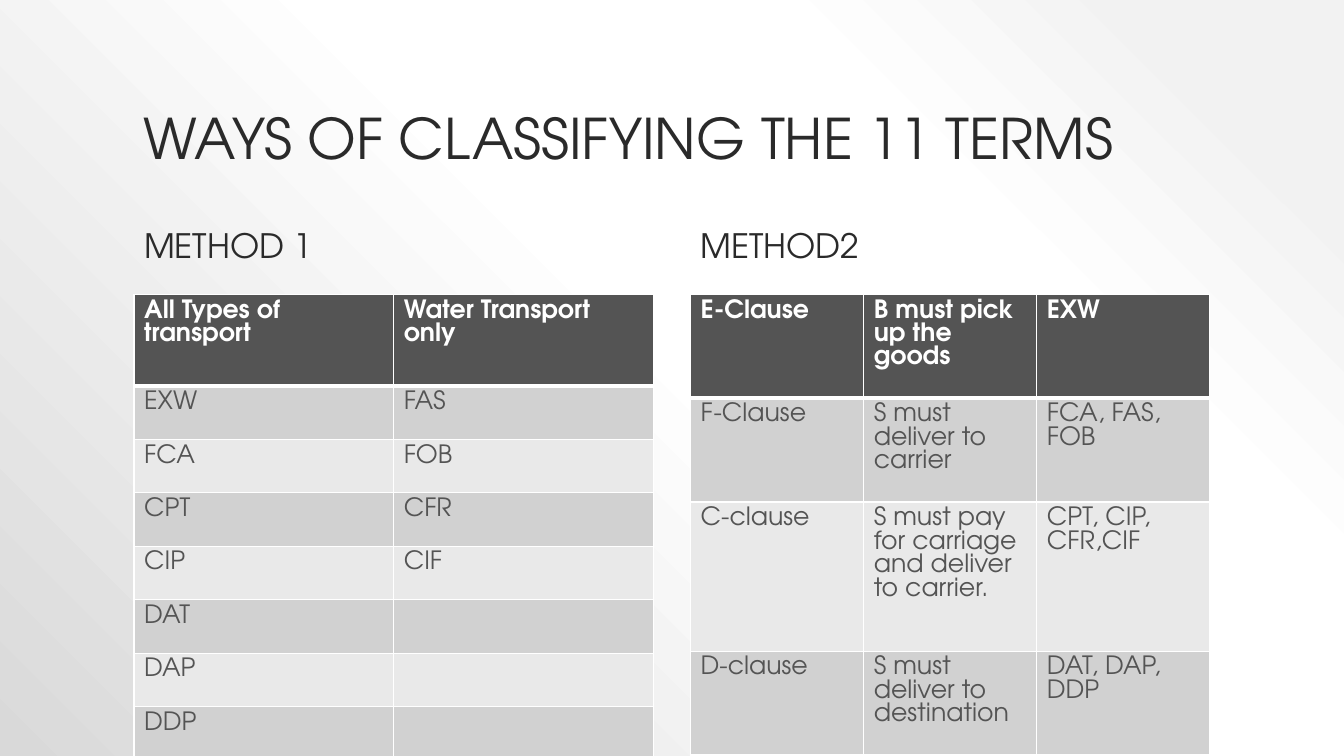
import dataclasses

import lxml.etree
import pptx
import pptx.dml.color
import pptx.enum.text
import pptx.oxml
import pptx.oxml.ns
import pptx.util


@dataclasses.dataclass(frozen=True)
class Theme:
    font: str = "TeX Gyre Adventor"
    title_size: int = 40
    heading_size: int = 24
    table_size: int = 18
    ink: str = "2A2A2A"
    header_fill: str = "545454"
    header_text: str = "FFFFFF"
    body_text: str = "545454"
    bands: tuple = ("D1D1D1", "E9E9E9")
    border: str = "FFFFFF"
    thin: float = 1
    thick: float = 3
    backdrop: tuple = ((10, "F2F2F2"), (28, "FFFFFF"), (48, "FFFFFF"), (100, "D9D9D9"))


THEME = Theme()
WIDTH, HEIGHT = 13.33, 7.5
MARGIN, GAP = 1.33, 0.37
CONTENT_WIDTH = WIDTH - 2 * MARGIN
COLUMN_WIDTH = (CONTENT_WIDTH - GAP) / 2
TITLE_TOP, TITLE_HEIGHT = 0.3, 1.45
METHOD_TOP, HEADING_HEIGHT = 2, 0.92

METHODS = [
    ("METHOD 1", [0.91] + [0.53] * 7, [
        ("All Types of transport", "Water Transport only"),
        ("EXW", "FAS"),
        ("FCA", "FOB"),
        ("CPT", "CFR"),
        ("CIP", "CIF"),
        ("DAT", ""),
        ("DAP", ""),
        ("DDP", ""),
    ]),
    ("METHOD2", [1.03, 1.03, 1.48, 1.03], [
        ("E-Clause", "B must pick up the goods", "EXW"),
        ("F-Clause", "S must deliver to carrier", "FCA, FAS, FOB"),
        ("C-clause", "S must pay for carriage and deliver to carrier.", "CPT, CIP, CFR,CIF"),
        ("D-clause", "S must deliver to destination", "DAT, DAP, DDP"),
    ]),
]


def rgb(value):
    return pptx.dml.color.RGBColor.from_string(value)


def inches(*lengths):
    return [pptx.util.Inches(length) for length in lengths]


def style_runs(paragraph, size, color, bold=False):
    for run in paragraph.runs:
        run.font.name = THEME.font
        run.font.size = pptx.util.Pt(size)
        run.font.color.rgb = rgb(color)
        run.font.bold = bold


def paint_background(slide):
    fill = slide.background.fill
    fill.gradient()
    gradient = slide.background._cSld.bg.bgPr.find(pptx.oxml.ns.qn("a:gradFill"))
    for child in list(gradient):
        gradient.remove(child)
    stops = lxml.etree.SubElement(gradient, pptx.oxml.ns.qn("a:gsLst"))
    for position, color in THEME.backdrop:
        stop = lxml.etree.SubElement(stops, pptx.oxml.ns.qn("a:gs"), pos=str(position * 1000))
        lxml.etree.SubElement(stop, pptx.oxml.ns.qn("a:srgbClr"), val=color)
    shade = lxml.etree.SubElement(gradient, pptx.oxml.ns.qn("a:path"), path="circle")
    lxml.etree.SubElement(shade, pptx.oxml.ns.qn("a:fillToRect"), l="100000", b="100000")


def add_label(slide, box, text, size, anchor):
    frame = slide.shapes.add_textbox(*inches(*box)).text_frame
    frame.word_wrap = True
    frame.vertical_anchor = anchor
    frame.text = text
    paragraph = frame.paragraphs[0]
    paragraph.line_spacing = 0.9
    style_runs(paragraph, size, THEME.ink)


def set_borders(cell, top, bottom):
    properties = cell._tc.get_or_add_tcPr()
    widths = {"lnL": THEME.thin, "lnR": THEME.thin, "lnT": top, "lnB": bottom}
    for index, (side, width) in enumerate(widths.items()):
        line = pptx.oxml.parse_xml(
            f'<a:{side} {pptx.oxml.ns.nsdecls("a")} w="{pptx.util.Pt(width)}">'
            f'<a:solidFill><a:srgbClr val="{THEME.border}"/></a:solidFill></a:{side}>'
        )
        properties.insert(index, line)


def add_terms_table(slide, box, heights, rows):
    table = slide.shapes.add_table(len(rows), len(rows[0]), *inches(*box)).table
    table.first_row = False
    table.horz_banding = False
    for column in table.columns:
        column.width = pptx.util.Inches(box[2] / len(rows[0]))
    for row_index, (height, texts) in enumerate(zip(heights, rows)):
        table.rows[row_index].height = pptx.util.Inches(height)
        header = row_index == 0
        fill = THEME.header_fill if header else THEME.bands[(row_index - 1) % 2]
        color = THEME.header_text if header else THEME.body_text
        for column_index, text in enumerate(texts):
            cell = table.cell(row_index, column_index)
            cell.text = text
            cell.fill.solid()
            cell.fill.fore_color.rgb = rgb(fill)
            set_borders(
                cell,
                THEME.thick if row_index == 1 else THEME.thin,
                THEME.thick if header else THEME.thin,
            )
            style_runs(cell.text_frame.paragraphs[0], THEME.table_size, color, header)


def add_method(slide, box, heading, heights, rows):
    left, top, width, height = box
    add_label(slide, (left, top, width, HEADING_HEIGHT), heading,
              THEME.heading_size, pptx.enum.text.MSO_ANCHOR.MIDDLE)
    table_box = (left, top + HEADING_HEIGHT, width, height - HEADING_HEIGHT)
    add_terms_table(slide, table_box, heights, rows)


def build_terms_slide(presentation):
    slide = presentation.slides.add_slide(presentation.slide_layouts[6])
    paint_background(slide)
    add_label(slide, (MARGIN, TITLE_TOP, CONTENT_WIDTH, TITLE_HEIGHT),
              "WAYS OF CLASSIFYING THE 11 TERMS",
              THEME.title_size, pptx.enum.text.MSO_ANCHOR.BOTTOM)
    for index, method in enumerate(METHODS):
        left = MARGIN + index * (COLUMN_WIDTH + GAP)
        add_method(slide, (left, METHOD_TOP, COLUMN_WIDTH, HEIGHT - METHOD_TOP), *method)


def main():
    presentation = pptx.Presentation()
    presentation.slide_width, presentation.slide_height = inches(WIDTH, HEIGHT)
    build_terms_slide(presentation)
    presentation.save("out.pptx")


if __name__ == "__main__":
    main()
